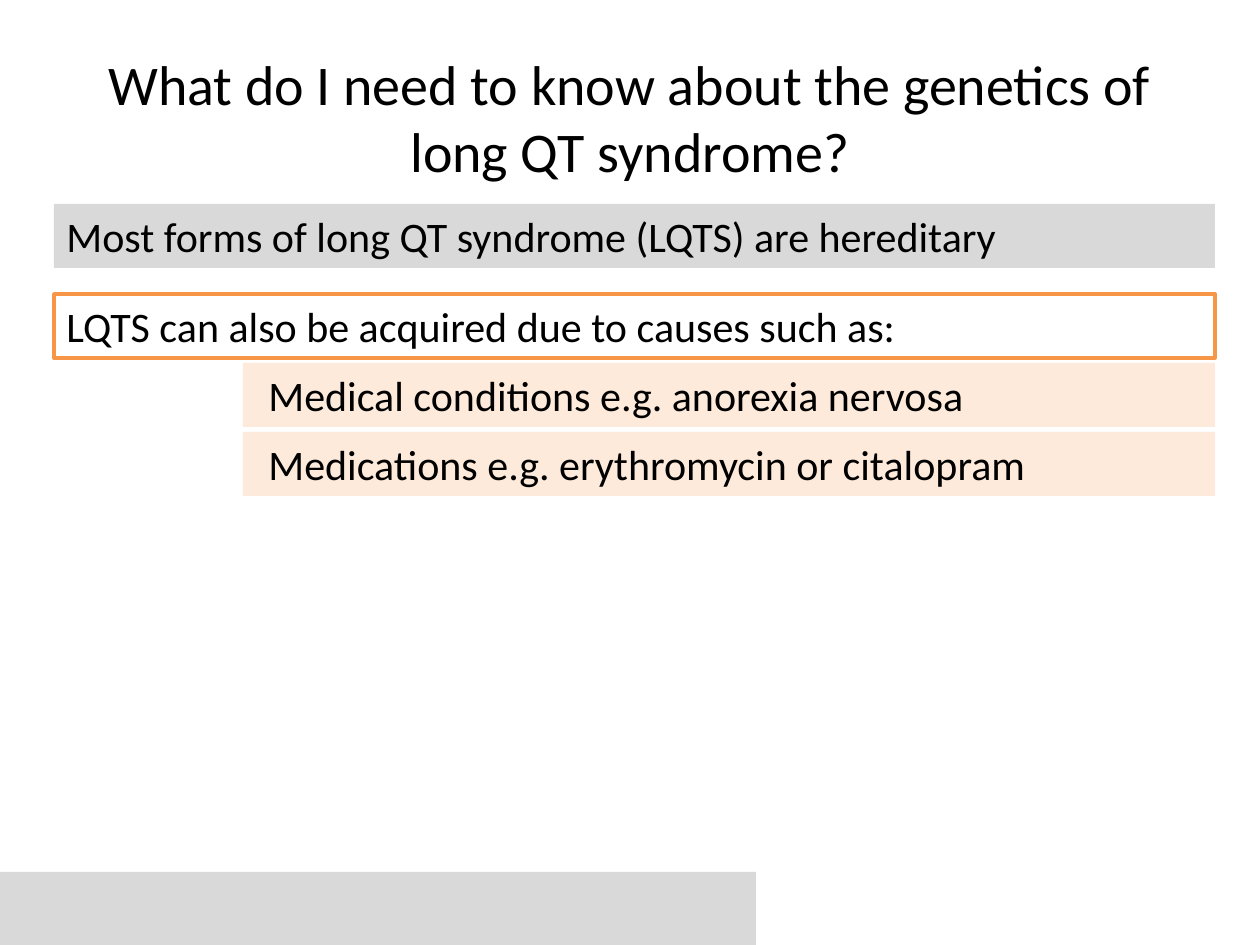
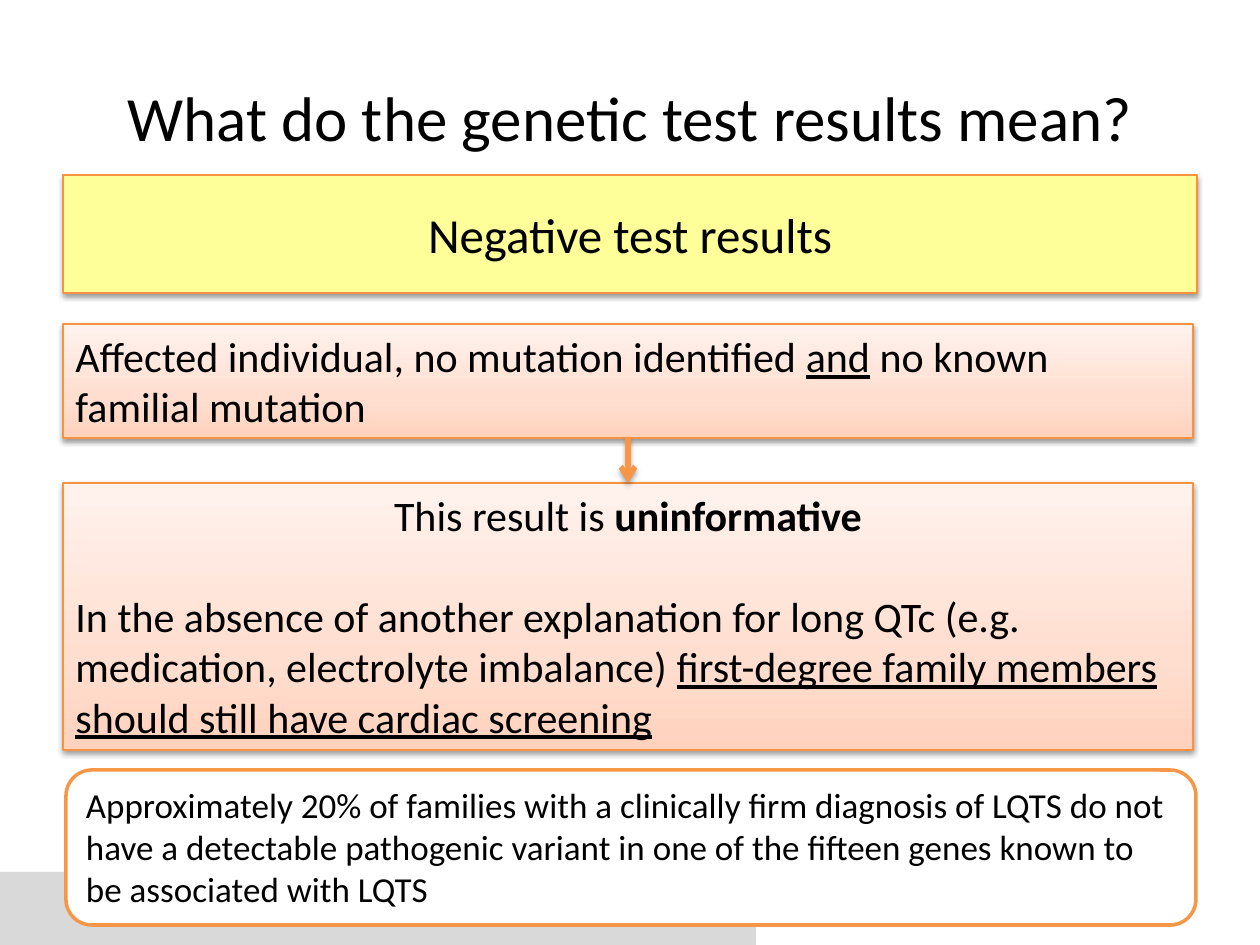
from lxml import etree
from pptx import Presentation
from pptx.dml.color import RGBColor
from pptx.enum.shapes import MSO_CONNECTOR, MSO_SHAPE
from pptx.enum.text import MSO_ANCHOR, PP_ALIGN
from pptx.oxml.ns import qn
from pptx.util import Pt

RECT = MSO_SHAPE.RECTANGLE
ROUND = MSO_SHAPE.ROUNDED_RECTANGLE
STRAIGHT = MSO_CONNECTOR.STRAIGHT
TOP, MIDDLE = MSO_ANCHOR.TOP, MSO_ANCHOR.MIDDLE
LEFT, CENTER = PP_ALIGN.LEFT, PP_ALIGN.CENTER
SCALE = 914400 / 126
FONT = "Calibri"
COLORS = {
    "black": "000000", "white": "FFFFFF", "gray": "D9D9D9",
    "orange": "F79646", "edge": "F69240", "cream": "FDEADA",
    "yellow": "FFFF99",
}
PEACH = [(0, "FFD2BD"), (35, "FFDED0"), (100, "FFF2ED")]


def px(n):
    return round(n * SCALE)


def color(name):
    return RGBColor.from_string(COLORS[name])


def add_runs(para, runs, size, align=LEFT):
    para.alignment = align
    for text, style in runs:
        run = para.add_run()
        run.text = text
        font = run.font
        font.name, font.size = FONT, Pt(size)
        font.color.rgb = color("black")
        font.bold = style == "bold"
        font.underline = style == "under"


def add_hex(parent, value):
    return etree.SubElement(parent, qn("a:srgbClr"), val=value)


def set_shadow(shape, alpha=0, dist=0):
    effects = etree.SubElement(shape._element.spPr, qn("a:effectLst"))
    if alpha:
        outer = etree.SubElement(
            effects, qn("a:outerShdw"), blurRad=str(Pt(3.1)),
            dist=str(Pt(dist)), dir="5400000", rotWithShape="0")
        etree.SubElement(add_hex(outer, COLORS["black"]), qn("a:alpha"),
                         val=str(alpha * 1000))


def fill_peach(shape):
    shape.fill.gradient()
    shape.fill.gradient_angle = 90
    stops = shape._element.spPr.find(".//" + qn("a:gsLst"))
    for stop in list(stops):
        stops.remove(stop)
    for pos, value in PEACH:
        add_hex(etree.SubElement(stops, qn("a:gs"), pos=str(pos * 1000)), value)


def add_box(slide, x, y, w, h, fill, line=None, width=2, kind=RECT,
            anchor=TOP, raised=False):
    shape = slide.shapes.add_shape(kind, px(x), px(y), px(w), px(h))
    if fill == "peach":
        fill_peach(shape)
    else:
        shape.fill.solid()
        shape.fill.fore_color.rgb = color(fill)
    if line:
        shape.line.color.rgb = color(line)
        shape.line.width = Pt(width)
    else:
        shape.line.fill.background()
    set_shadow(shape, 38 if raised else 0, 1.6)
    shape.text_frame.word_wrap = True
    shape.text_frame.vertical_anchor = anchor
    return shape.text_frame


def add_card(slide, x, y, w, h, fill, anchor=MIDDLE):
    return add_box(slide, x, y, w, h, fill, "edge", 0.75, anchor=anchor,
                   raised=True)


def add_arrow(slide, x, top, end):
    arrow = slide.shapes.add_connector(STRAIGHT, px(x), px(top), px(x), px(end))
    arrow.line.color.rgb = color("orange")
    arrow.line.width = Pt(3)
    etree.SubElement(arrow.line._get_or_add_ln(), qn("a:tailEnd"), type="arrow")
    set_shadow(arrow, 35, 1.8)


def add_slide(deck, title, size):
    slide = deck.slides.add_slide(deck.slide_layouts[5])
    add_box(slide, 0, 872, 756, 73, "gray")
    head = slide.shapes.title
    head.left, head.top, head.width, head.height = map(px, (63, 38, 1134, 157))
    head.text_frame.vertical_anchor = MIDDLE
    add_runs(head.text_frame.paragraphs[0], [(title, "")], size, CENTER)
    return slide


def add_causes(deck):
    slide = add_slide(
        deck, "What do I need to know about the genetics of long QT syndrome?", 32)
    heads = [
        ("Most forms of long QT syndrome (LQTS) are hereditary", 204, "gray", None),
        ("LQTS can also be acquired due to causes such as:", 294, "white", "orange"),
    ]
    for text, y, fill, line in heads:
        frame = add_box(slide, 54, y, 1161, 64, fill, line, anchor=MIDDLE)
        add_runs(frame.paragraphs[0], [(text, "")], 24)
    causes = ["Medical conditions e.g. anorexia nervosa",
              "Medications e.g. erythromycin or citalopram"]
    for i, text in enumerate(causes):
        para = add_box(slide, 243, 363 + 69 * i, 972, 64, "cream").paragraphs[0]
        add_runs(para, [(text, "")], 24)
        para._p.get_or_add_pPr().set("indent", str(px(13)))


def add_results(deck):
    slide = add_slide(deck, "What do the genetic test results mean?", 36)
    case = add_card(slide, 63, 324, 1130, 114, "peach")
    add_runs(case.paragraphs[0], [
        ("Affected individual, no mutation identified ", ""), ("and", "under"),
        (" no known familial mutation", "")], 24)
    banner = add_card(slide, 63, 175, 1134, 118, "yellow")
    add_runs(banner.paragraphs[0], [("Negative test results", "")], 28, CENTER)
    advice = add_card(slide, 63, 483, 1130, 267, "peach", TOP)
    add_runs(advice.paragraphs[0], [
        ("This result is ", ""), ("uninformative", "bold")], 24, CENTER)
    para = advice.add_paragraph()
    para.space_before = Pt(29)
    add_runs(para, [
        ("In the absence of another explanation for long QTc (e.g. medication, "
         "electrolyte imbalance) ", ""),
        ("first-degree family members should still have cardiac screening",
         "under")], 24)
    add_arrow(slide, 628, 437, 483)
    note = add_box(slide, 66, 770, 1130, 155, "white", "orange", kind=ROUND)
    add_runs(note.paragraphs[0], [
        ("Approximately 20% of families with a clinically firm diagnosis of LQTS "
         "do not have a detectable pathogenic variant in one of the fifteen genes "
         "known to be associated with LQTS", "")], 20)


def main():
    deck = Presentation()
    deck.slide_width, deck.slide_height = px(1260), px(945)
    add_causes(deck)
    add_results(deck)
    deck.save("out.pptx")


if __name__ == "__main__":
    main()
